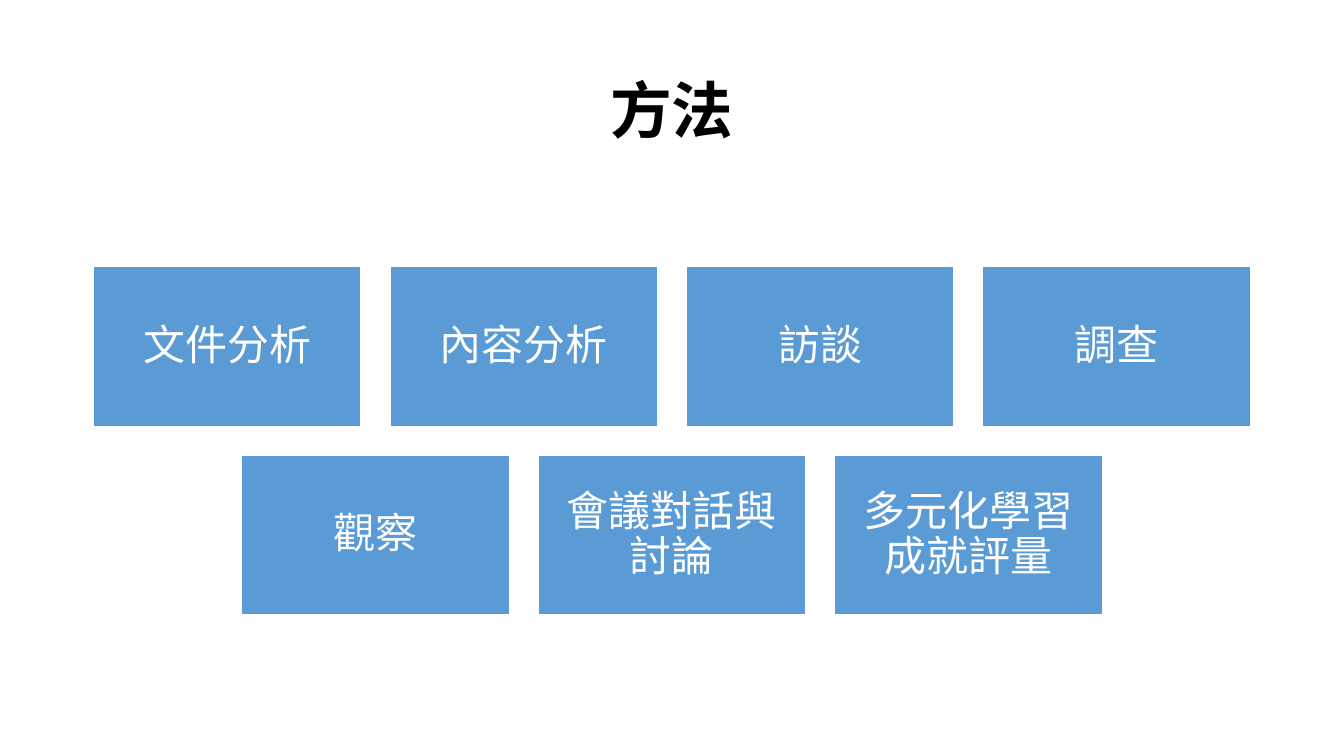
from pptx import Presentation
from pptx.dml.color import RGBColor
from pptx.enum.shapes import MSO_SHAPE
from pptx.enum.text import MSO_ANCHOR, PP_ALIGN
from pptx.util import Inches, Pt


def color(hex_value):
    return RGBColor.from_string(hex_value)


def write_text(shape, text, size, hex_value, bold=False):
    frame = shape.text_frame
    frame.word_wrap = True
    frame.vertical_anchor = MSO_ANCHOR.MIDDLE
    paragraph = frame.paragraphs[0]
    paragraph.alignment = PP_ALIGN.CENTER
    paragraph.line_spacing = 0.9
    run = paragraph.add_run()
    run.text = text
    run.font.name = "Cabin"
    run.font.size = Pt(size)
    run.font.bold = bold
    run.font.color.rgb = color(hex_value)
    return frame


# Slide
slide_width, slide_height = 13.33, 7.5
presentation = Presentation()
presentation.slide_width = Inches(slide_width)
presentation.slide_height = Inches(slide_height)
slide = presentation.slides.add_slide(presentation.slide_layouts[6])

# Title
title_width = 11.5
title = slide.shapes.add_textbox(
    Inches((slide_width - title_width) / 2), Inches(0.4), Inches(title_width), Inches(1.45)
)
write_text(title, "方法", 44, "000000", bold=True)

# Method boxes: each row is centred on the slide
method_rows = [
    ["文件分析", "內容分析", "訪談", "調查"],
    ["觀察", "會議對話與討論", "多元化學習成就評量"],
]
box_width, box_height, gap = 2.67, 1.6, 0.27
grid_top = 2.64

for row, methods in enumerate(method_rows):
    row_width = len(methods) * (box_width + gap) - gap
    row_left = (slide_width - row_width) / 2
    top = grid_top + row * (box_height + gap)
    for column, method in enumerate(methods):
        left = row_left + column * (box_width + gap)
        box = slide.shapes.add_shape(
            MSO_SHAPE.RECTANGLE, Inches(left), Inches(top), Inches(box_width), Inches(box_height)
        )
        box.shadow.inherit = False
        box.fill.solid()
        box.fill.fore_color.rgb = color("5B9BD5")
        box.line.color.rgb = color("FFFFFF")
        box.line.width = Pt(2)
        frame = write_text(box, method, 30, "FFFFFF")
        frame.margin_left = frame.margin_right = Inches(0.12)
        frame.margin_top = frame.margin_bottom = Inches(0.12)

presentation.save("out.pptx")
